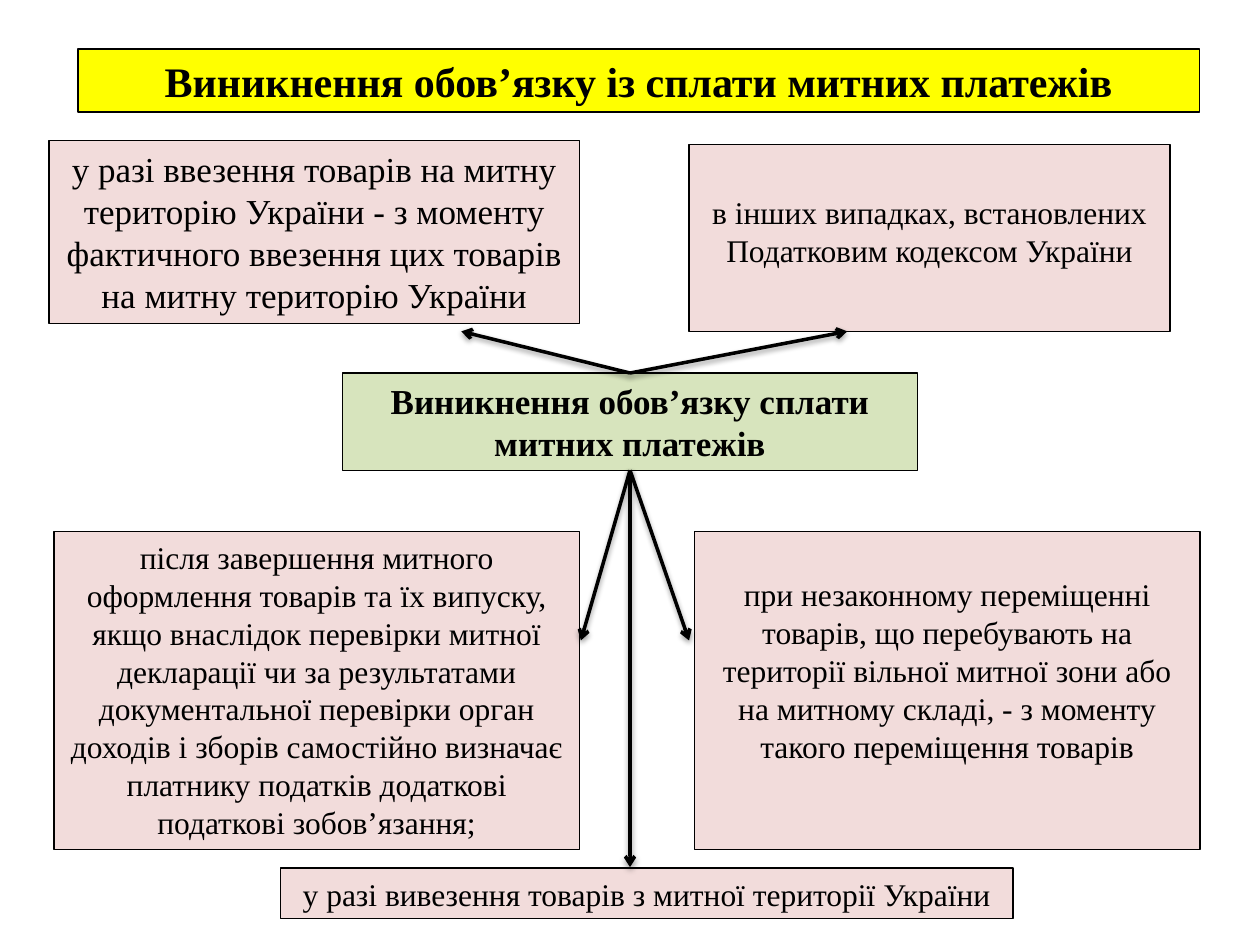
from lxml.etree import SubElement as Sub
from pptx import Presentation
from pptx.dml.color import RGBColor as Rgb
from pptx.enum.shapes import MSO_CONNECTOR as Link, MSO_SHAPE as Form
from pptx.enum.text import MSO_ANCHOR as Anchor, MSO_AUTO_SIZE as Auto, PP_ALIGN as Align
from pptx.oxml.ns import qn
from pptx.util import Cm, Pt

BLACK = Rgb(0x00, 0x00, 0x00)
YELLOW = Rgb(0xFF, 0xFF, 0x00)
GREEN = Rgb(0xD7, 0xE4, 0xBD)
PINK = Rgb(0xF2, 0xDC, 0xDB)
FONT = "Times New Roman"


def style(shape, text, fill, size, bold=False, anchor=Anchor.TOP, inset=(0.13, 0.13)):
    """Fill and outline a shape and set its centred text."""
    shape.fill.solid()
    shape.fill.fore_color.rgb = fill
    shape.line.color.rgb = BLACK
    shape.line.width = Pt(0.75)
    frame = shape.text_frame
    frame.text = text
    frame.word_wrap = True
    frame.auto_size = Auto.NONE
    frame.vertical_anchor = anchor
    frame.margin_top, frame.margin_bottom = map(Cm, inset)
    para = frame.paragraphs[0]
    para.alignment = Align.CENTER
    font = para.font
    font.name, font.size, font.bold = FONT, Pt(size), bold
    font.color.rgb = BLACK


def panel(slide, box, text, fill=PINK, size=18, **look):
    """Draw one text panel in the given box."""
    shape = slide.shapes.add_shape(Form.RECTANGLE, *map(Cm, box))
    shape.shadow.inherit = False
    style(shape, text, fill, size, **look)


def arrow(slide, start, end):
    """Draw a softly shadowed arrow between two points."""
    line = slide.shapes.add_connector(Link.STRAIGHT, *map(Cm, start + end))
    line.line.color.rgb = BLACK
    line.line.width = Pt(2)
    Sub(line.line._get_or_add_ln(), qn("a:tailEnd"), type="arrow")
    effect = Sub(line._element.spPr, qn("a:effectLst"))
    shade = Sub(effect, qn("a:outerShdw"), blurRad="40000", dist="20000",
                dir="5400000", rotWithShape="0")
    color = Sub(shade, qn("a:srgbClr"), val=str(BLACK))
    Sub(color, qn("a:alpha"), val="38000")


def header(slide, box):
    """Place the slide title in the box."""
    title = slide.shapes.title
    title.left, title.top, title.width, title.height = map(Cm, box)
    style(title, "Виникнення обов’язку із сплати митних платежів",
          YELLOW, 24, bold=True, anchor=Anchor.MIDDLE)


def upper(slide, box):
    """Place the import case and the other cases side by side."""
    left, top, width, height = box
    panel(slide, (left, top, 10.69, height - 0.16),
          "у разі ввезення товарів на митну територію України - з моменту "
          "фактичного ввезення цих товарів на митну територію України", size=20)
    panel(slide, (left + width - 9.7, top + 0.08, 9.7, height - 0.08),
          "в інших випадках, встановлених Податковим кодексом України",
          anchor=Anchor.MIDDLE, inset=(0.13, 0.41))


def lower(slide, box):
    """Place the audit case and the unlawful movement case side by side."""
    left, top, width, height = box
    panel(slide, (left, top, 10.59, height),
          "після завершення митного оформлення товарів та їх випуску, якщо "
          "внаслідок перевірки митної декларації чи за результатами "
          "документальної перевірки орган доходів і зборів самостійно визначає "
          "платнику податків додаткові податкові зобов’язання;")
    panel(slide, (left + width - 10.19, top, 10.19, height),
          "при незаконному переміщенні товарів, що перебувають на території "
          "вільної митної зони або на митному складі, - з моменту такого "
          "переміщення товарів", inset=(0.88, 0.13))


def hub(slide, box):
    """Place the central panel and the arrows to every case."""
    left, top, width, height = box
    panel(slide, box, "Виникнення обов’язку сплати митних платежів",
          GREEN, 20, bold=True)
    mid, base = left + width / 2, top + height
    for shift, drop in ((0, 8), (-0.99, 3.43), (1.19, 3.43)):
        arrow(slide, (mid, base), (mid + shift, base + drop))
    for shift in (-3.4, 4.38):
        arrow(slide, (mid, top), (mid + shift, top - 0.84))


def footer(slide, box):
    """Place the export case in the box."""
    panel(slide, box, "у разі вивезення товарів з митної території України")


def main():
    """Build and save the slide."""
    deck = Presentation()
    deck.slide_width, deck.slide_height = Cm(25.4), Cm(19.05)
    slide = deck.slides.add_slide(deck.slide_layouts[5])
    header(slide, (1.57, 0.99, 22.61, 1.27))
    upper(slide, (0.99, 2.84, 22.6, 3.84))
    lower(slide, (1.09, 10.72, 23.1, 6.4))
    footer(slide, (5.66, 17.5, 14.76, 1.02))
    hub(slide, (6.9, 7.52, 11.6, 1.96))
    deck.save("out.pptx")


if __name__ == "__main__":
    main()
